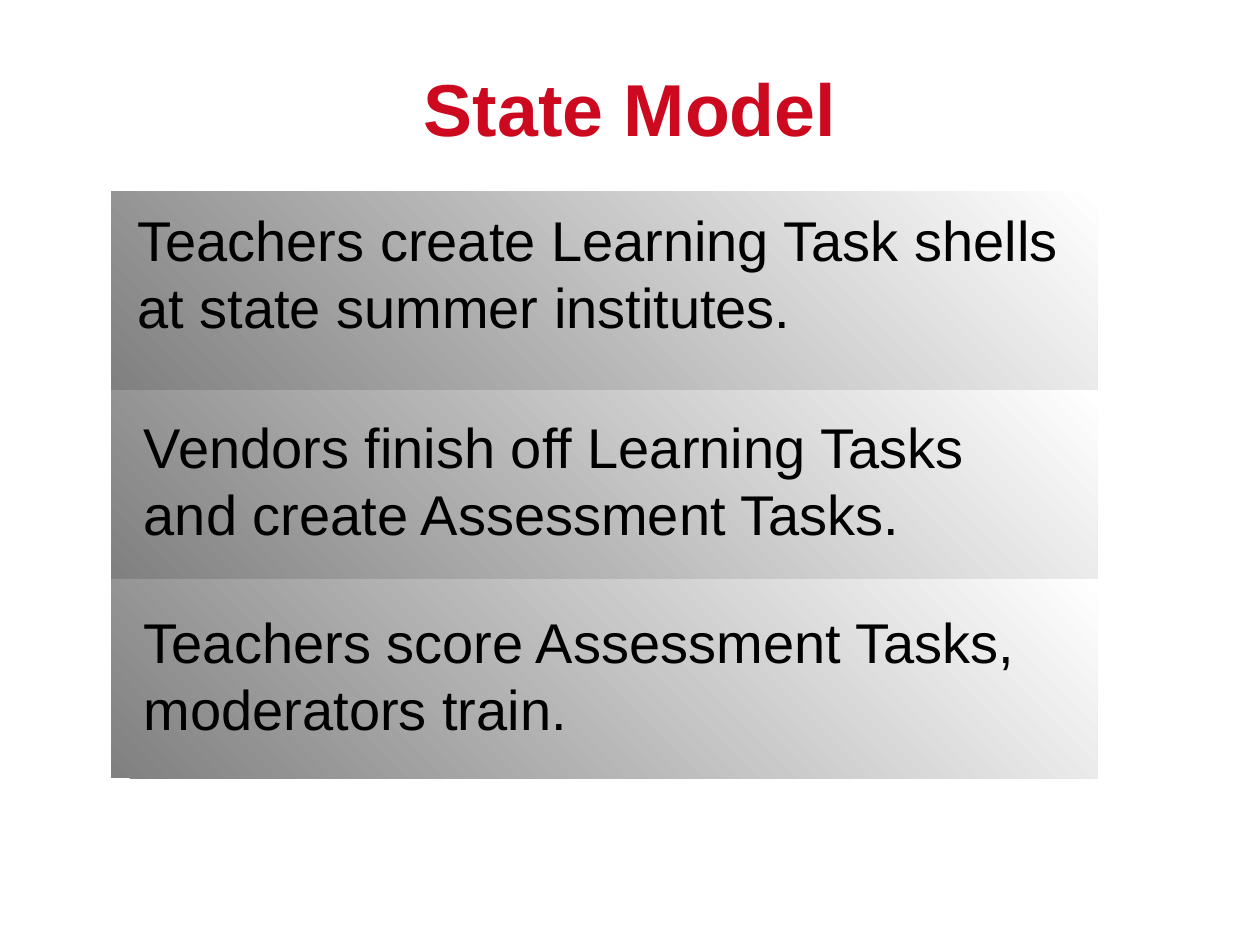
from dataclasses import dataclass

from pptx import Presentation
from pptx.dml.color import RGBColor
from pptx.enum.shapes import MSO_SHAPE as Shape
from pptx.enum.text import MSO_ANCHOR as Anchor, MSO_AUTO_SIZE as AutoSize, PP_ALIGN as Align
from pptx.slide import Slide
from pptx.text.text import TextFrame
from pptx.util import Cm, Pt

BAND_LEFT, BAND_WIDTH = 2.24, 19.89
FIRST_BAND_TOP = 3.86
GRADIENT_COLORS = ("808080", "FFFFFF")


@dataclass(frozen=True)
class Step:
    text: str
    band_height: float
    left: float
    top: float
    width: float
    height: float


STEPS = (
    Step("Teachers create Learning Task shells at state summer institutes.",
         4.01, 2.77, 4.14, 18.82, 3.23),
    Step("Vendors finish off Learning Tasks and create Assessment Tasks.",
         3.81, 2.9, 8.31, 18.69, 3.05),
    Step("Teachers score Assessment Tasks, moderators train.",
         4.01, 2.9, 12.24, 18.69, 2.92),
)


def color(value: str) -> RGBColor:
    return RGBColor.from_string(value)


def write_text(frame: TextFrame, text: str, size: int, text_color: str,
               bold: bool = False, align: Align = Align.LEFT) -> None:
    frame.word_wrap = True
    frame.vertical_anchor = Anchor.TOP
    frame.margin_left = frame.margin_right = 0
    frame.margin_top = frame.margin_bottom = 0
    paragraph = frame.paragraphs[0]
    paragraph.alignment = align
    run = paragraph.add_run()
    run.text = text
    run.font.name = "Arial"
    run.font.size = Pt(size)
    run.font.bold = bold
    run.font.color.rgb = color(text_color)


def draw_title(slide: Slide, text: str) -> None:
    title = slide.shapes.title
    title.left, title.top = Cm(1.27), Cm(1.27)
    title.width, title.height = Cm(22.86), Cm(1.8)
    write_text(title.text_frame, text, 42, "CD0920", bold=True, align=Align.CENTER)
    title.text_frame.auto_size = AutoSize.SHAPE_TO_FIT_TEXT


def draw_band(slide: Slide, top: float, height: float) -> None:
    band = slide.shapes.add_shape(
        Shape.RECTANGLE, Cm(BAND_LEFT), Cm(top), Cm(BAND_WIDTH), Cm(height))
    band.shadow.inherit = False
    band.line.fill.background()
    band.fill.gradient()
    band.fill.gradient_angle = 45
    for position, (stop, value) in enumerate(zip(band.fill.gradient_stops, GRADIENT_COLORS)):
        stop.position = position
        stop.color.rgb = color(value)


def draw_step_text(slide: Slide, step: Step) -> None:
    box = slide.shapes.add_textbox(
        Cm(step.left), Cm(step.top), Cm(step.width), Cm(step.height))
    write_text(box.text_frame, step.text, 32, "000000")


def main() -> None:
    presentation = Presentation()
    presentation.slide_width, presentation.slide_height = Cm(25.4), Cm(19.05)
    slide = presentation.slides.add_slide(presentation.slide_layouts.get_by_name("Title Only"))
    draw_title(slide, "State Model")
    band_top = FIRST_BAND_TOP
    for step in STEPS:
        draw_band(slide, band_top, step.band_height)
        draw_step_text(slide, step)
        band_top += step.band_height
    presentation.save("out.pptx")


if __name__ == "__main__":
    main()
